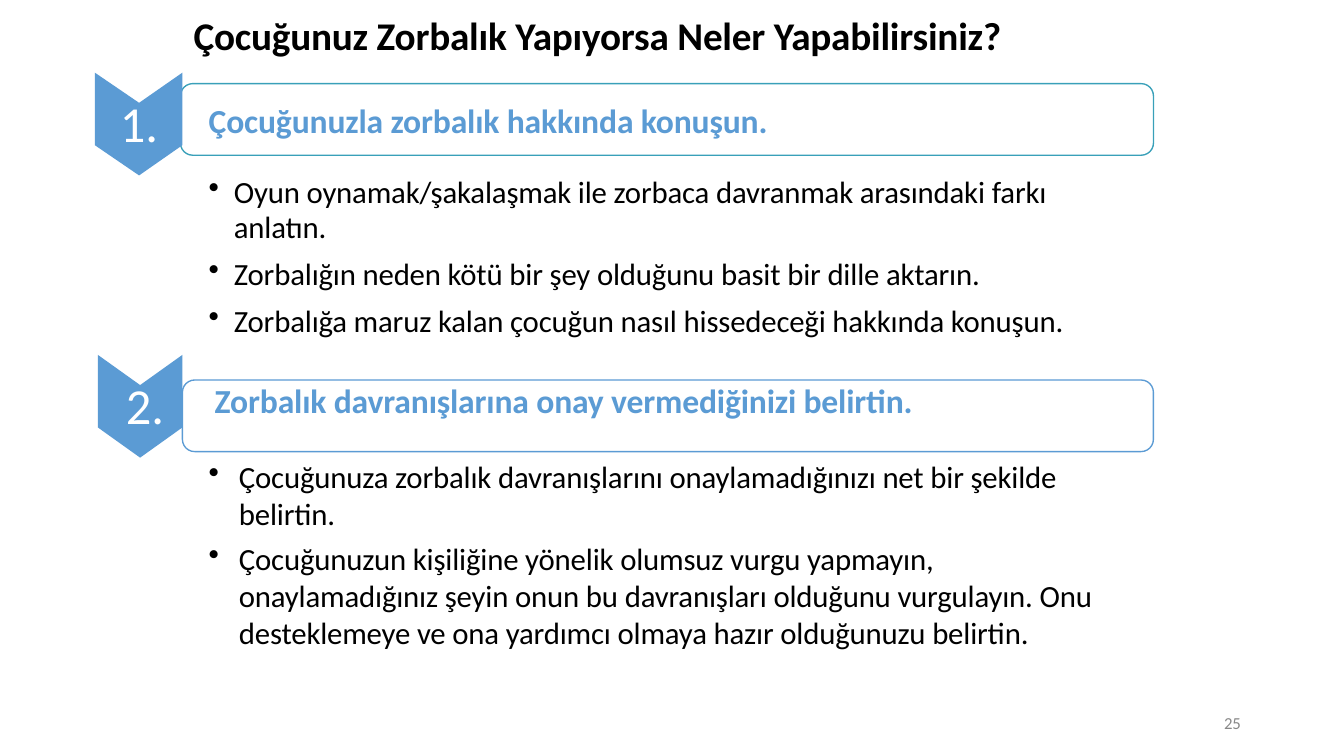
from pptx import Presentation
from pptx import util as u
from pptx.dml.color import RGBColor
from pptx.enum import shapes, text
from pptx.oxml import parse_xml
from pptx.oxml.ns import nsdecls

PX = 9144
BLUE = RGBColor(0x5B, 0x9B, 0xD4)
TEAL = RGBColor(0x39, 0xA0, 0xB9)
BLACK = RGBColor(0, 0, 0)
WHITE = RGBColor(0xFF, 0xFF, 0xFF)
GREY = RGBColor(0x88, 0x88, 0x88)

TALK = [
    "Oyun oynamak/şakalaşmak ile zorbaca davranmak arasındaki farkı anlatın.",
    "Zorbalığın neden kötü bir şey olduğunu basit bir dille aktarın.",
    "Zorbalığa maruz kalan çocuğun nasıl hissedeceği hakkında konuşun.",
]
STAND = [
    "Çocuğunuza zorbalık davranışlarını onaylamadığınızı net bir şekilde belirtin.",
    "Çocuğunuzun kişiliğine yönelik olumsuz vurgu yapmayın, onaylamadığınız "
    "şeyin onun bu davranışları olduğunu vurgulayın. Onu desteklemeye ve ona "
    "yardımcı olmaya hazır olduğunuzu belirtin.",
]


def px(*nums):
    return [u.Emu(n * PX) for n in nums]


def add_text(slide, box, lines, size, color, bold=False, track=-10):
    frame = slide.shapes.add_textbox(*px(*box)).text_frame
    frame.word_wrap = True
    frame.margin_left = frame.margin_right = frame.margin_bottom = 0
    frame.margin_top = px(1)[0]
    frame.vertical_anchor = text.MSO_ANCHOR.TOP
    frame.text = "\n".join(lines)
    for para in frame.paragraphs:
        for run in para.runs:
            font = run.font
            font.name = "Calibri"
            font.size = u.Pt(size)
            font.bold = bold
            font.color.rgb = color
            run._r.get_or_add_rPr().set("spc", str(track))
    return frame


def add_list(slide, box, lines, indent, hang, gap):
    frame = add_text(slide, box, lines, 22, BLACK)
    for i, para in enumerate(frame.paragraphs):
        props = para._p.get_or_add_pPr()
        props.set("marL", str(indent * PX))
        props.set("indent", str(-hang * PX))
        props.append(parse_xml(f'<a:buChar {nsdecls("a")} char="•"/>'))
        if i:
            para.space_before = u.Pt(gap)
    return frame


def add_badge(slide, box, label, inset):
    left, top, wide, high = box
    mid, notch = left + wide / 2, 30
    pen = slide.shapes.build_freeform(left + wide, top, scale=PX)
    pen.add_line_segments([
        (mid, top + notch), (left, top), (left, top + high - notch),
        (mid, top + high), (left + wide, top + high - notch),
    ])
    shape = pen.convert_to_shape()
    shape.shadow.inherit = False
    shape.fill.solid()
    shape.fill.fore_color.rgb = BLUE
    shape.line.fill.background()
    add_text(slide, (left + inset, top + 18, 50, 63), [label], 36, WHITE)


def add_bar(slide, box, line, label, inset, drop):
    left, top, wide, high = box
    bar = slide.shapes.add_shape(shapes.MSO_SHAPE.ROUNDED_RECTANGLE, *px(*box))
    bar.adjustments[0] = 0.17
    bar.shadow.inherit = False
    bar.fill.background()
    bar.line.color.rgb = line
    bar.line.width = u.Pt(0.96)
    add_text(slide, (left + inset, top + drop, 800, 43), [label], 24, BLUE, True)


def main():
    deck = Presentation()
    deck.slide_width, deck.slide_height = px(1333, 750)
    slide = deck.slides.add_slide(deck.slide_layouts[6])

    add_text(slide, (192, 10, 880, 49),
             ["Çocuğunuz Zorbalık Yapıyorsa Neler Yapabilirsiniz?"],
             28, BLACK, True, -15)

    add_bar(slide, (179, 83, 965, 71), TEAL,
            "Çocuğunuzla zorbalık hakkında konuşun.", 28, 15)
    add_badge(slide, (94, 72, 87, 102), "1.", 25)
    talk = add_list(slide, (206, 172, 861, 166), TALK, 26, 25, 7.3)
    talk.paragraphs[0].line_spacing = u.Pt(25.1)

    add_bar(slide, (181, 377, 963, 71), BLUE,
            "Zorbalık davranışlarına onay vermediğinizi belirtin.", 32, -1)
    add_badge(slide, (97, 352, 84, 102), "2.", 28)
    add_list(slide, (206, 453, 889, 194), STAND, 31, 30, 6)

    add_text(slide, (1214, 706, 40, 20), ["25"], 12, GREY, track=0)
    deck.save("out.pptx")


if __name__ == "__main__":
    main()
